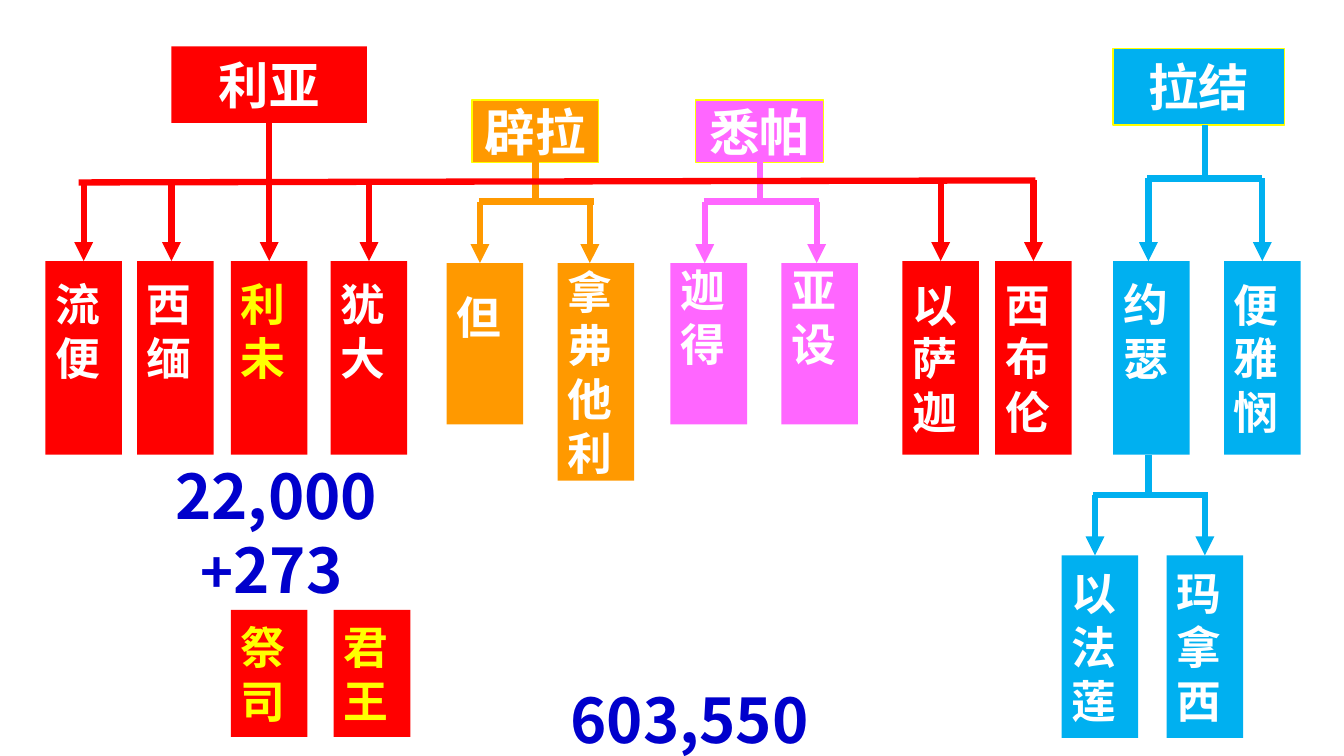
from dataclasses import dataclass
from typing import Optional

from lxml.etree import SubElement
from pptx import Presentation
from pptx.dml.color import RGBColor
from pptx.enum.shapes import MSO_CONNECTOR, MSO_SHAPE
from pptx.enum.text import MSO_ANCHOR, PP_ALIGN
from pptx.oxml.ns import qn
from pptx.util import Inches, Pt

RED, ORANGE, PINK, SKY = "FF0000", "FF9900", "FF66FF", "00B0F0"
WHITE, YELLOW, BLUE = "FFFFFF", "FFFF00", "0000CC"
SON_WIDTH = 0.76
SON_LINE = 0.54  # height of one line in a son's box
JOIN_TOLERANCE = 0.021


@dataclass
class Person:
    name: str
    left: float
    top: float
    height: float
    width: float = SON_WIDTH
    colour: str = RED
    text_colour: str = WHITE
    size: int = 32
    outline: Optional[str] = None
    raised: bool = False  # text sits half a line above the middle

    @property
    def centre(self) -> float:
        return self.left + self.width / 2


@dataclass
class Branch:
    parent: str
    colour: str
    bar: tuple[float, float, float, float]
    trunk_x: float
    drops: dict[str, float]  # child: x of the arrow
    trunk_child: Optional[str] = None


def mother(name: str, left: float, top: float, width: float, height: float,
           colour: str, outline: Optional[str] = None) -> Person:
    return Person(name, left, top, height, width, colour, size=36, outline=outline)


PEOPLE = [
    mother("拉结", 11.04, 0.48, 1.7, 0.76, SKY, YELLOW),
    mother("悉帕", 6.9, 0.99, 1.27, 0.62, PINK, YELLOW),
    mother("辟拉", 4.68, 0.99, 1.26, 0.62, ORANGE, YELLOW),
    mother("利亚", 1.7, 0.46, 1.94, 0.76, RED),
    Person("迦得", 6.65, 2.61, 1.6, colour=PINK, raised=True),
    Person("亚设", 7.75, 2.61, 1.6, colour=PINK, raised=True),
    Person("但", 4.43, 2.61, 1.6, colour=ORANGE, raised=True),
    Person("拿弗他利", 5.53, 2.61, 2.16, colour=ORANGE),
    Person("流便", 0.45, 2.59, 1.92, raised=True),
    Person("西缅", 1.36, 2.59, 1.92, raised=True),
    Person("利未", 2.29, 2.59, 1.92, text_colour=YELLOW, raised=True),
    Person("犹大", 3.28, 2.59, 1.92, raised=True),
    Person("以萨迦", 8.95, 2.59, 1.92),
    Person("西布伦", 9.87, 2.59, 1.92),
    Person("约瑟", 11.04, 2.59, 1.92, colour=SKY, raised=True),
    Person("便雅悯", 12.14, 2.59, 1.92, colour=SKY),
    Person("以法莲", 10.53, 5.51, 1.81, colour=SKY),
    Person("玛拿西", 11.57, 5.51, 1.81, colour=SKY),
    Person("祭司", 2.29, 6.05, 1.26, text_colour=YELLOW),
    Person("君王", 3.31, 6.05, 1.26, text_colour=YELLOW),
]

BRANCHES = [
    Branch("悉帕", PINK, (6.98, 2, 8.12, 2), 7.53, {"迦得": 6.99, "亚设": 8.1}),
    Branch("辟拉", ORANGE, (4.75, 2, 5.89, 2), 5.3, {"但": 4.76, "拿弗他利": 5.85}),
    Branch("利亚", RED, (0.78, 1.81, 10.27, 1.79), 2.67,
           {"流便": 0.81, "西缅": 1.7, "犹大": 3.65, "以萨迦": 9.33, "西布伦": 10.24},
           trunk_child="利未"),
    Branch("拉结", SKY, (11.38, 1.77, 12.52, 1.77), 11.95, {"约瑟": 11.39, "便雅悯": 12.5}),
    Branch("约瑟", SKY, (10.84, 4.91, 11.98, 4.91), 11.39, {"以法莲": 10.86, "玛拿西": 11.96}),
]


def rgb(colour: str) -> RGBColor:
    return RGBColor.from_string(colour)


def add_run(paragraph, text: str, size: int, colour: str, font: str) -> None:
    run = paragraph.add_run()
    run.text = text
    for key, value in {"name": font, "size": Pt(size), "bold": True}.items():
        setattr(run.font, key, value)
    run.font.color.rgb = rgb(colour)


def add_person(slide, person: Person):
    box = slide.shapes.add_shape(
        MSO_SHAPE.RECTANGLE,
        *map(Inches, (person.left, person.top, person.width, person.height)))
    box.shadow.inherit = False
    box.fill.solid()
    box.fill.fore_color.rgb = rgb(person.colour)
    if person.outline:
        box.line.color.rgb = rgb(person.outline)
        box.line.width = Pt(1)
    else:
        box.line.fill.background()
    frame_format = {"word_wrap": True, "vertical_anchor": MSO_ANCHOR.MIDDLE}
    if person.raised:
        frame_format |= {"margin_top": 0, "margin_bottom": Inches(SON_LINE)}
    for key, value in frame_format.items():
        setattr(box.text_frame, key, value)
    paragraph = box.text_frame.paragraphs[0]
    paragraph.alignment = PP_ALIGN.LEFT if person.width == SON_WIDTH else PP_ALIGN.CENTER
    add_run(paragraph, person.name, person.size, person.text_colour, "Calibri")
    return box


def add_line(slide, points: tuple[float, float, float, float], colour: str,
             arrow: bool = False):
    line = slide.shapes.add_connector(MSO_CONNECTOR.STRAIGHT, *map(Inches, points))
    line.line.color.rgb = rgb(colour)
    line.line.width = Pt(4.5)
    properties = line._element.spPr
    if arrow:
        SubElement(properties.find(qn("a:ln")), qn("a:tailEnd"), type="triangle")
    SubElement(properties, qn("a:effectLst"))
    return line


def add_branch(slide, branch: Branch, people: dict[str, Person], boxes: dict) -> None:
    parent = people[branch.parent]
    bar_y = branch.bar[3]
    add_line(slide, branch.bar, branch.colour)
    # Trunk from the parent, to the bar or through it to a child
    heir = branch.trunk_child
    end = (people[heir].centre, people[heir].top) if heir else (branch.trunk_x, bar_y)
    joined = abs(parent.centre - branch.trunk_x) < JOIN_TOLERANCE
    trunk_x = parent.centre if joined else branch.trunk_x
    if not heir:
        end = (trunk_x, bar_y)
    trunk = add_line(slide, (trunk_x, parent.top + parent.height, *end),
                     branch.colour, arrow=bool(heir))
    if joined:
        trunk.begin_connect(boxes[parent.name], 2)
    if heir:
        trunk.end_connect(boxes[heir], 0)
    # Arrows from the bar down to the children
    for name, drop_x in branch.drops.items():
        child = people[name]
        joined = abs(child.centre - drop_x) < JOIN_TOLERANCE
        x = child.centre if joined else drop_x
        drop = add_line(slide, (x, bar_y, x, child.top), branch.colour, arrow=True)
        if joined:
            drop.end_connect(boxes[name], 0)


def add_count(slide, left: float, top: float, height: float,
              lines: list[list[tuple[str, int]]]) -> None:
    box = slide.shapes.add_textbox(*map(Inches, (left, top, 2.61, height)))
    frame = box.text_frame
    frame.word_wrap = True
    for number, runs in enumerate(lines):
        paragraph = frame.add_paragraph() if number else frame.paragraphs[0]
        if number:
            paragraph._p.get_or_add_pPr().set("marL", str(Inches(0.25)))
        for text, size in runs:
            add_run(paragraph, text, size, BLUE, "Noto Sans CJK SC")


def main() -> None:
    deck = Presentation()
    deck.slide_width, deck.slide_height = Inches(13.33), Inches(7.5)
    slide = deck.slides.add_slide(deck.slide_layouts[6])

    # Head counts
    add_count(slide, 5.56, 6.72, 0.84, [[("603,550", 44)]])
    add_count(slide, 1.64, 4.49, 1.58, [[("22,000", 44)], [("+", 40), ("273", 44)]])

    # Family tree
    people = {person.name: person for person in PEOPLE}
    boxes = {person.name: add_person(slide, person) for person in PEOPLE}
    for branch in BRANCHES:
        add_branch(slide, branch, people, boxes)

    deck.save("out.pptx")


if __name__ == "__main__":
    main()
